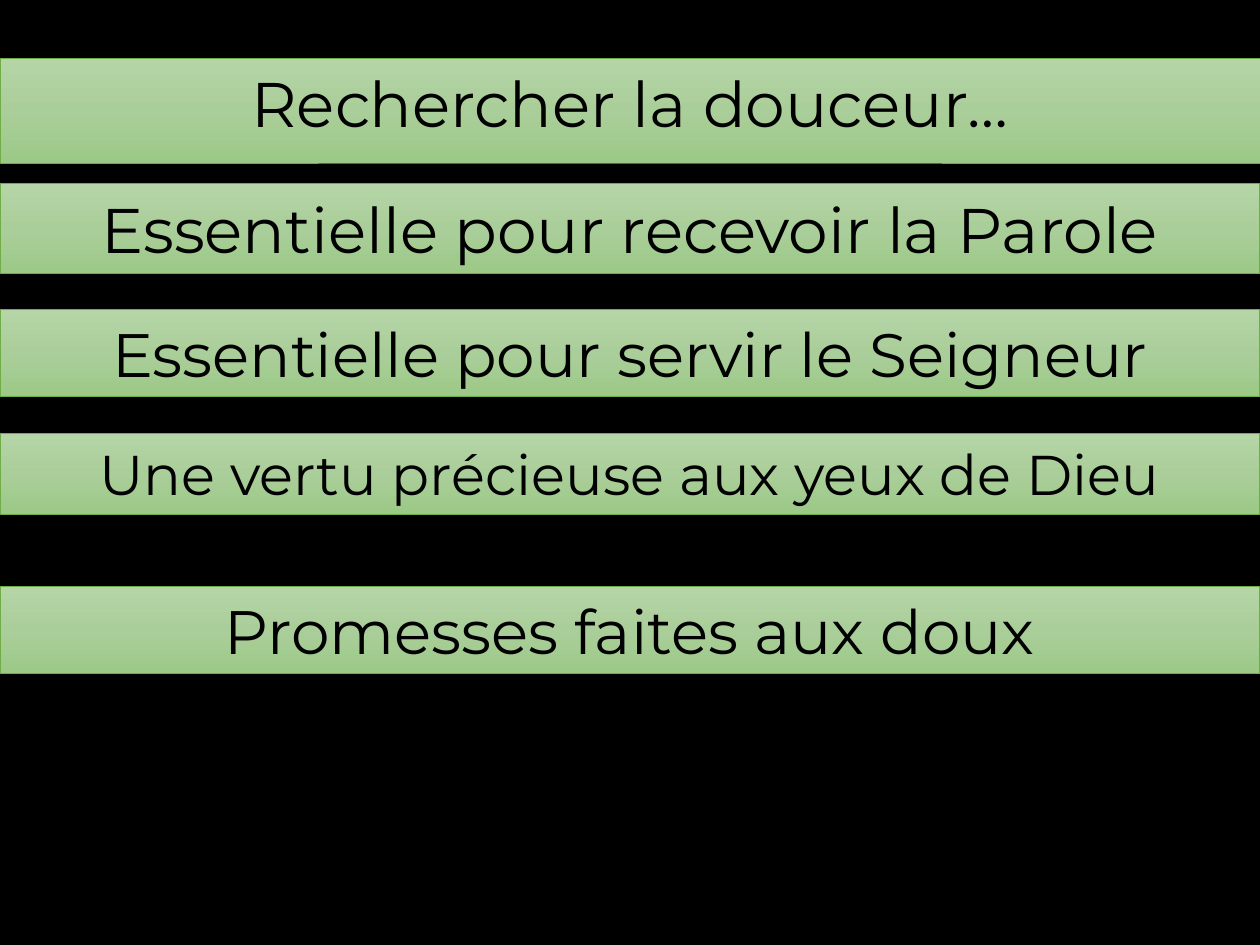
import copy

import pptx
import pptx.dml.color
import pptx.enum.shapes
import pptx.enum.text
import pptx.util

PX = 914400 // 126
SLIDE_WIDTH, SLIDE_HEIGHT = 1260, 945
FONT = "Montserrat"
BACKGROUND, TEXT, BORDER = "000000", "000000", "70AD47"
GREENS = [(0, "B5D5A7"), (0.5, "AACE9A"), (1, "9CC987")]

# wording, top (px), height (px), text size (pt)
HEADING = ("Rechercher la douceur…", 58, 90, 36)
POINTS = [
    ("Essentielle pour recevoir la Parole", 184, 90, 36),
    ("Essentielle pour servir le Seigneur", 310, 87, 35),
    ("Une vertu précieuse aux yeux de Dieu", 433, 81, 32),
    ("Promesses faites aux doux", 587, 87, 35),
]


def rgb(code):
    return pptx.dml.color.RGBColor.from_string(code)


def fill_with_greens(fill):
    fill.gradient()
    fill.gradient_angle = 270  # counter-clockwise: light at the top
    stop_list = fill._fill._gradFill.gsLst
    stop_list.insert(1, copy.deepcopy(stop_list[0]))
    for stop, (position, colour) in zip(fill.gradient_stops, GREENS):
        stop.position = position
        stop.color.rgb = rgb(colour)


def format_band(band, wording, top, height, size):
    band.left, band.top = 0, top * PX
    band.width, band.height = SLIDE_WIDTH * PX, height * PX
    band.shadow.inherit = False
    fill_with_greens(band.fill)
    band.line.color.rgb = rgb(BORDER)
    band.line.width = pptx.util.Pt(0.5)

    frame = band.text_frame
    frame.word_wrap = True
    frame.auto_size = pptx.enum.text.MSO_AUTO_SIZE.SHAPE_TO_FIT_TEXT
    frame.vertical_anchor = pptx.enum.text.MSO_ANCHOR.TOP
    paragraph = frame.paragraphs[0]
    paragraph.alignment = pptx.enum.text.PP_ALIGN.CENTER
    run = paragraph.add_run()
    run.text = wording
    run.font.name = FONT
    run.font.size = pptx.util.Pt(size)
    run.font.color.rgb = rgb(TEXT)


def main():
    deck = pptx.Presentation()
    deck.slide_width, deck.slide_height = SLIDE_WIDTH * PX, SLIDE_HEIGHT * PX
    slide = deck.slides.add_slide(deck.slide_layouts.get_by_name("Title Only"))
    slide.background.fill.solid()
    slide.background.fill.fore_color.rgb = rgb(BACKGROUND)

    format_band(slide.shapes.title, *HEADING)
    for point in POINTS:
        band = slide.shapes.add_shape(
            pptx.enum.shapes.MSO_SHAPE.RECTANGLE, 0, 0, PX, PX)
        format_band(band, *point)
    deck.save("out.pptx")


if __name__ == "__main__":
    main()
